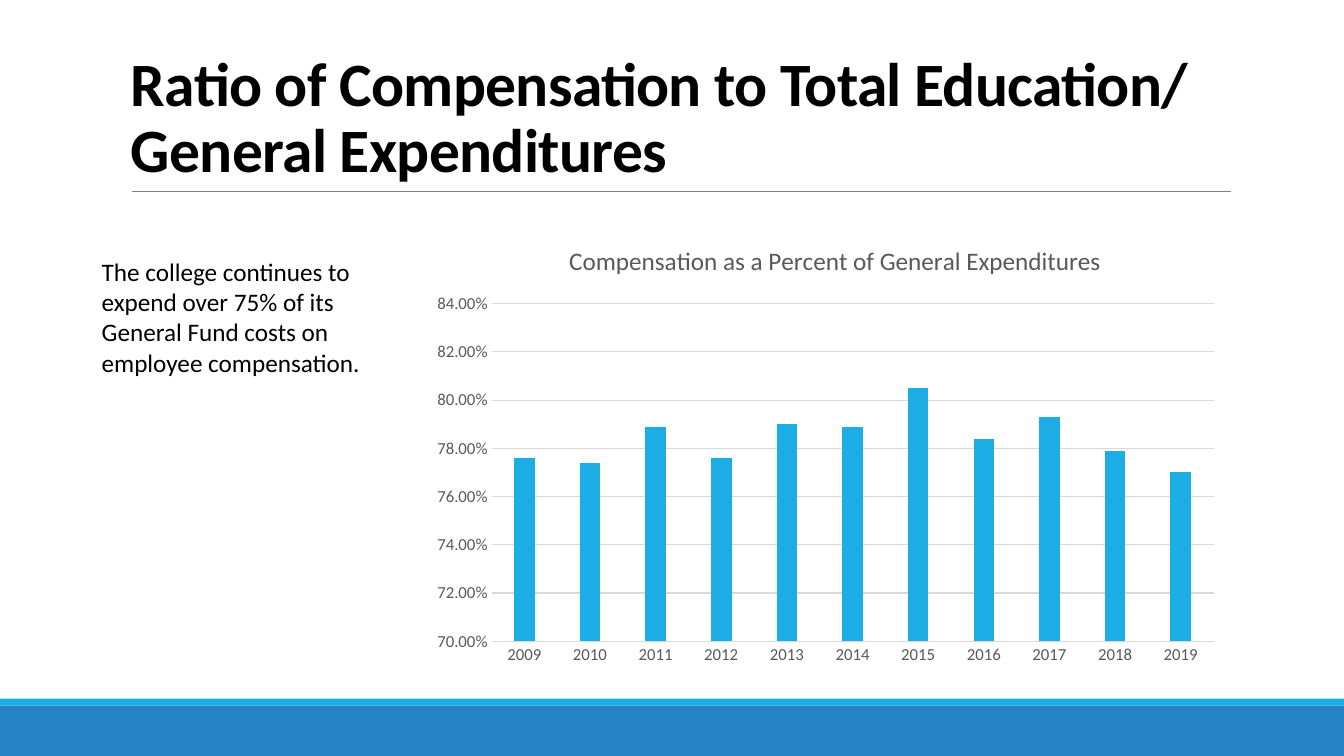
from dataclasses import dataclass

from lxml import etree
from pptx import Presentation
from pptx.chart.data import CategoryChartData
from pptx.dml.color import RGBColor
from pptx.enum import chart as ch, shapes, text
from pptx.oxml import parse_xml
from pptx.oxml.ns import nsdecls, qn
from pptx.util import Pt


@dataclass(frozen=True)
class Theme:
    face: str = "Calibri"
    ink: str = "000000"
    label: str = "595959"
    grid: str = "D9D9D9"
    rule: str = "808080"
    band: str = "2683C6"
    bar: str = "1CADE4"
    head: int = 44
    body: int = 18
    tick: int = 12


THEME = Theme()
WIDE, HIGH = 960, 540
SHARES = {
    "2009": 0.776, "2010": 0.774, "2011": 0.789, "2012": 0.776,
    "2013": 0.79, "2014": 0.789, "2015": 0.805, "2016": 0.784,
    "2017": 0.793, "2018": 0.779, "2019": 0.77,
}


def color(code):
    return RGBColor.from_string(code)


def style(font, size, code, bold=False):
    font.name = THEME.face
    font.size = Pt(size)
    font.bold = bold
    font.color.rgb = color(code)


def add_band(slide, top, high, code):
    band = slide.shapes.add_shape(
        shapes.MSO_SHAPE.RECTANGLE, Pt(0), Pt(top), Pt(WIDE), Pt(high))
    band.shadow.inherit = False
    band.fill.solid()
    band.fill.fore_color.rgb = color(code)
    band.line.fill.background()


def add_rule(slide, left, right, top):
    rule = slide.shapes.add_connector(
        shapes.MSO_CONNECTOR.STRAIGHT, Pt(left), Pt(top), Pt(right), Pt(top))
    rule.line.color.rgb = color(THEME.rule)
    rule.line.width = Pt(0.5)
    etree.SubElement(rule._element.spPr, qn("a:effectLst"))


def add_text(slide, box, words, size, bold=False):
    frame = slide.shapes.add_textbox(*map(Pt, box)).text_frame
    frame.word_wrap = True
    para = frame.paragraphs[0]
    para.text = words
    style(para.font, size, THEME.ink, bold)
    return frame


def add_title(slide, box, words):
    frame = add_text(slide, box, words, THEME.head, bold=True)
    frame.vertical_anchor = text.MSO_ANCHOR.BOTTOM
    para = frame.paragraphs[0]
    para.line_spacing = 0.9
    para.runs[0]._r.get_or_add_rPr().set("spc", "-50")


def place(part, inner=False, **spots):
    """Fix a chart part's position, in fractions of the chart."""
    items = [("layoutTarget", "inner")] if inner else []
    items += [(f"{key}Mode", "edge") for key in "xy"]
    items += spots.items()
    body = "".join(f'<c:{key} val="{val}"/>' for key, val in items)
    for old in part.findall(qn("c:layout")):
        part.remove(old)
    layout = parse_xml(
        f'<c:layout {nsdecls("c")}><c:manualLayout>{body}'
        "</c:manualLayout></c:layout>")
    lead = part.find(qn("c:tx"))
    part.insert(0 if lead is None else part.index(lead) + 1, layout)


def style_axis(axis):
    axis.major_tick_mark = axis.minor_tick_mark = ch.XL_TICK_MARK.NONE
    style(axis.tick_labels.font, THEME.tick, THEME.label)


def style_line(line):
    line.color.rgb = color(THEME.grid)
    line.width = Pt(0.75)


def add_bars(slide, box, title, shares):
    data = CategoryChartData(number_format="0.00%")
    data.categories = list(shares)
    data.add_series("Series 1", list(shares.values()))
    chart = slide.shapes.add_chart(
        ch.XL_CHART_TYPE.COLUMN_CLUSTERED, *map(Pt, box), data).chart
    style(chart.font, THEME.tick, THEME.label)
    chart.has_legend = False

    chart.has_title = True
    para = chart.chart_title.text_frame.paragraphs[0]
    para.text = title
    style(para.font, THEME.body, THEME.label)
    style(para.runs[0].font, THEME.body, THEME.label)
    chart.chart_title.include_in_layout = False
    place(chart.chart_title._element, x=0.18, y=0.05)
    place(chart._chartSpace.chart.plotArea, inner=True,
          x=0.09, y=0.14, w=0.89, h=0.79)

    years, rate = chart.category_axis, chart.value_axis
    style_axis(years)
    style_line(years.format.line)
    style_axis(rate)
    rate.format.line.fill.background()
    rate.minimum_scale, rate.maximum_scale = 0.7, 0.85
    rate.major_unit = 0.02
    rate.tick_labels.number_format = "0.00%"
    rate.tick_labels.number_format_is_linked = False
    style_line(rate.major_gridlines.format.line)

    plot = chart.plots[0]
    plot.vary_by_categories = False
    plot.gap_width, plot.overlap = 219, -27
    fill = plot.series[0].format.fill
    fill.solid()
    fill.fore_color.rgb = color(THEME.bar)


def main():
    deck = Presentation()
    deck.slide_width, deck.slide_height = Pt(WIDE), Pt(HIGH)
    slide = deck.slides.add_slide(deck.slide_layouts[6])
    add_band(slide, 504, 36, THEME.band)
    add_band(slide, 499, 5, THEME.bar)
    add_rule(slide, 94, 879, 136.5)
    add_title(slide, (86.5, 22, 792, 114.5),
              "Ratio of Compensation to Total Education/ General Expenditures")
    add_bars(slide, (299, 154, 579.5, 327),
             "Compensation as a Percent of General Expenditures", SHARES)
    add_text(slide, (65.5, 179.5, 234, 94.5),
             "The college continues to expend over 75% of its General Fund "
             "costs on employee compensation.", THEME.body)
    deck.save("out.pptx")


if __name__ == "__main__":
    main()
